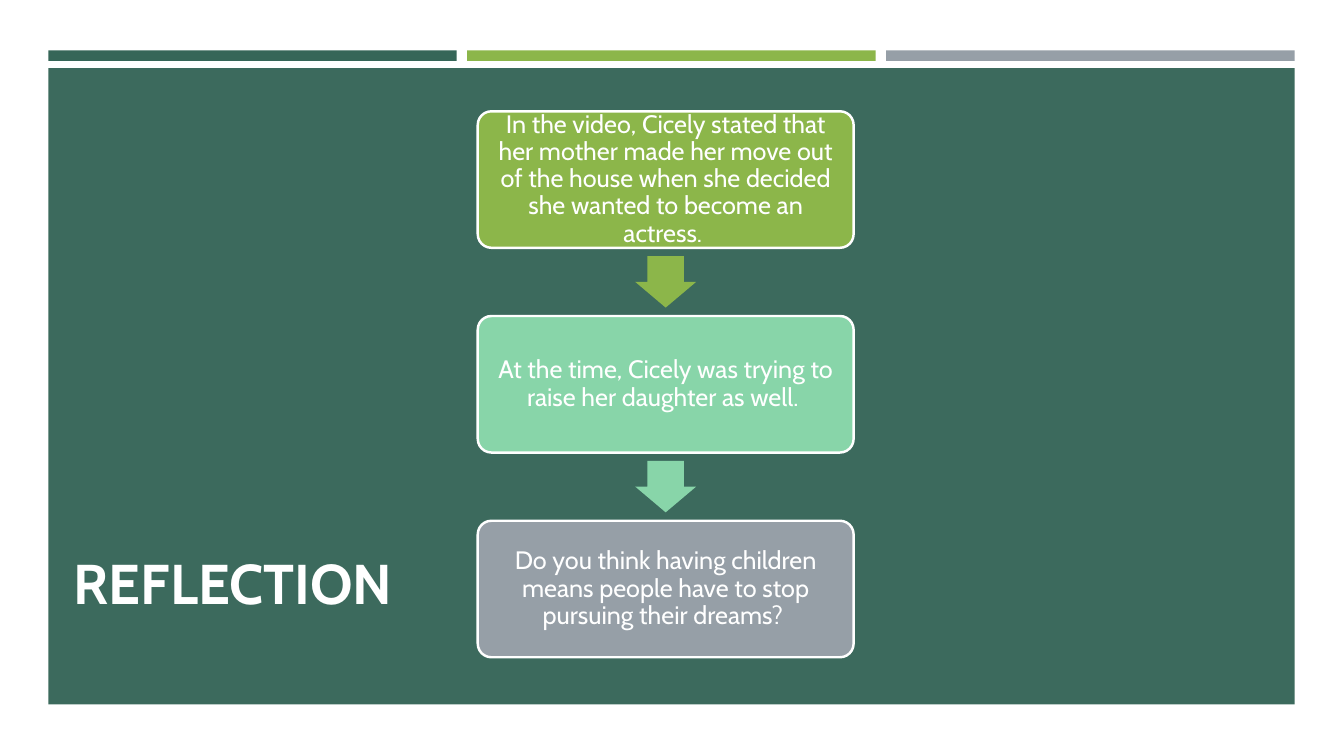
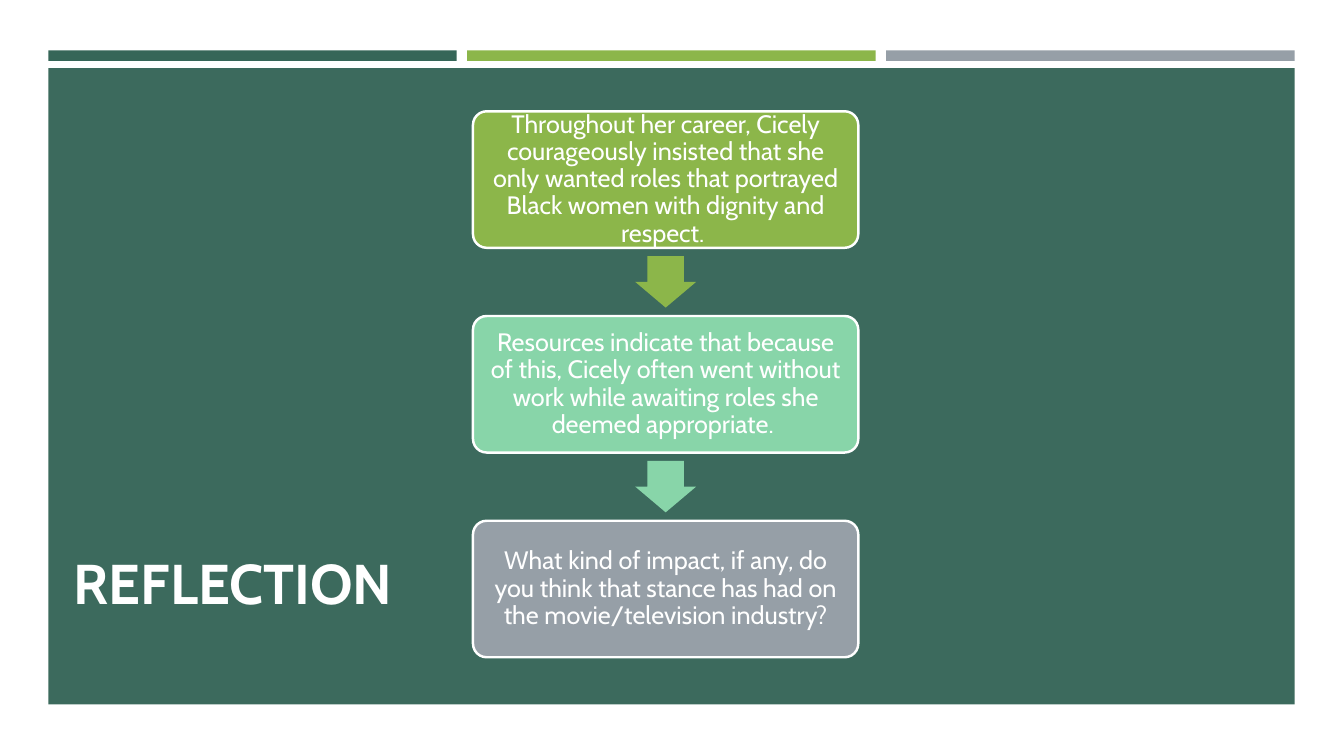
import pptx
import pptx.dml.color
import pptx.enum.shapes
import pptx.enum.text
import pptx.oxml.ns
import pptx.util
from lxml import etree

PX = 9525
FONT = "Cabin"
COLOURS = {
    "pine": "366658",
    "leaf": "8CB64A",
    "mint": "88D5A9",
    "slate": "969FA7",
    "white": "FFFFFF",
}
BAR_COLOURS = ["pine", "leaf", "slate"]
STEP_COLOURS = ["leaf", "mint", "slate"]
FORMATS = {
    "title": {"name": FONT, "size": pptx.util.Pt(40), "bold": True},
    "step": {"name": FONT, "size": pptx.util.Pt(18)},
}

MARGIN, CONTENT_WIDTH = 46, 1187
BAR_WIDTH, BAR_PITCH = 389, 399
STEP_CENTRE, STEP_TOP, STEP_HEIGHT, STEP_PITCH = 634, 106, 130, 195
ARROW_WIDTH, ARROW_HEIGHT = 58, 49
STEP_INSET = 7

SLIDES = [
    {
        "title": "REFLECTION",
        "step_width": 358,
        "steps": [
            "In the video, Cicely stated that her mother made her move out of the house "
            "when she decided she wanted to become an actress. ",
            "At the time, Cicely was trying to raise her daughter as well. ",
            "Do you think having children means people have to stop pursuing their dreams? ",
        ],
    },
    {
        "title": "REFLECTION",
        "step_width": 367,
        "steps": [
            "Throughout her career, Cicely courageously insisted that she only wanted roles "
            "that portrayed Black women with dignity and respect. ",
            "Resources indicate that because of this, Cicely often went without work "
            "while awaiting roles she deemed appropriate. ",
            "What kind of impact, if any, do you think that stance has had on "
            "the movie/television industry?",
        ],
    },
]


def add_block(page, kind, colour, left, top, width, height):
    """Add a filled preset shape without outline or shadow, measured in px."""
    block = page.shapes.add_shape(
        getattr(pptx.enum.shapes.MSO_SHAPE, kind),
        *(round(length * PX) for length in (left, top, width, height)),
    )
    block.shadow.inherit = False
    block.fill.solid()
    block.fill.fore_color.rgb = pptx.dml.color.RGBColor.from_string(COLOURS[colour])
    block.line.fill.background()
    return block


def write_text(box, text, style):
    """Write one white, vertically centred paragraph into a box."""
    box.text_frame.word_wrap = True
    box.text_frame.vertical_anchor = pptx.enum.text.MSO_ANCHOR.MIDDLE
    para = box.text_frame.paragraphs[0]
    para.line_spacing = 0.9
    span = para.add_run()
    span.text = text
    for name, value in FORMATS[style].items():
        setattr(span.font, name, value)
    span.font.color.rgb = pptx.dml.color.RGBColor.from_string(COLOURS["white"])
    return para


deck = pptx.Presentation()
deck.slide_width, deck.slide_height = 1280 * PX, 720 * PX

for content in SLIDES:
    page = deck.slides.add_slide(deck.slide_layouts[6])

    panel = add_block(page, "RECTANGLE", "pine", MARGIN, 65, CONTENT_WIDTH, 606)
    panel_colour = next(panel.fill._xPr.iter(pptx.oxml.ns.qn("a:srgbClr")))
    etree.SubElement(panel_colour, pptx.oxml.ns.qn("a:alpha"), val="97000")

    for index, colour in enumerate(BAR_COLOURS):
        add_block(page, "RECTANGLE", colour, MARGIN + index * BAR_PITCH, 48, BAR_WIDTH, 10)

    title = page.shapes.add_textbox(61 * PX, 486 * PX, 1157 * PX, 144 * PX)
    write_text(title, content["title"], "title")

    step_width = content["step_width"]
    for index, (text, colour) in enumerate(zip(content["steps"], STEP_COLOURS)):
        top = STEP_TOP + index * STEP_PITCH
        step = add_block(page, "ROUNDED_RECTANGLE", colour,
                         STEP_CENTRE - step_width / 2, top, step_width, STEP_HEIGHT)
        step.adjustments[0] = 0.1
        step.line.color.rgb = pptx.dml.color.RGBColor.from_string(COLOURS["white"])
        step.line.width = pptx.util.Pt(1.75)
        for side in ("left", "top", "right", "bottom"):
            setattr(step.text_frame, f"margin_{side}", STEP_INSET * PX)
        para = write_text(step, text, "step")
        para.alignment = pptx.enum.text.PP_ALIGN.CENTER

        if index < len(content["steps"]) - 1:
            gap_middle = top + (STEP_HEIGHT + STEP_PITCH) / 2
            arrow = add_block(page, "DOWN_ARROW", colour, STEP_CENTRE - ARROW_WIDTH / 2,
                              gap_middle - ARROW_HEIGHT / 2, ARROW_WIDTH, ARROW_HEIGHT)
            arrow.adjustments[0], arrow.adjustments[1] = 0.6, 0.5

deck.save("out.pptx")
